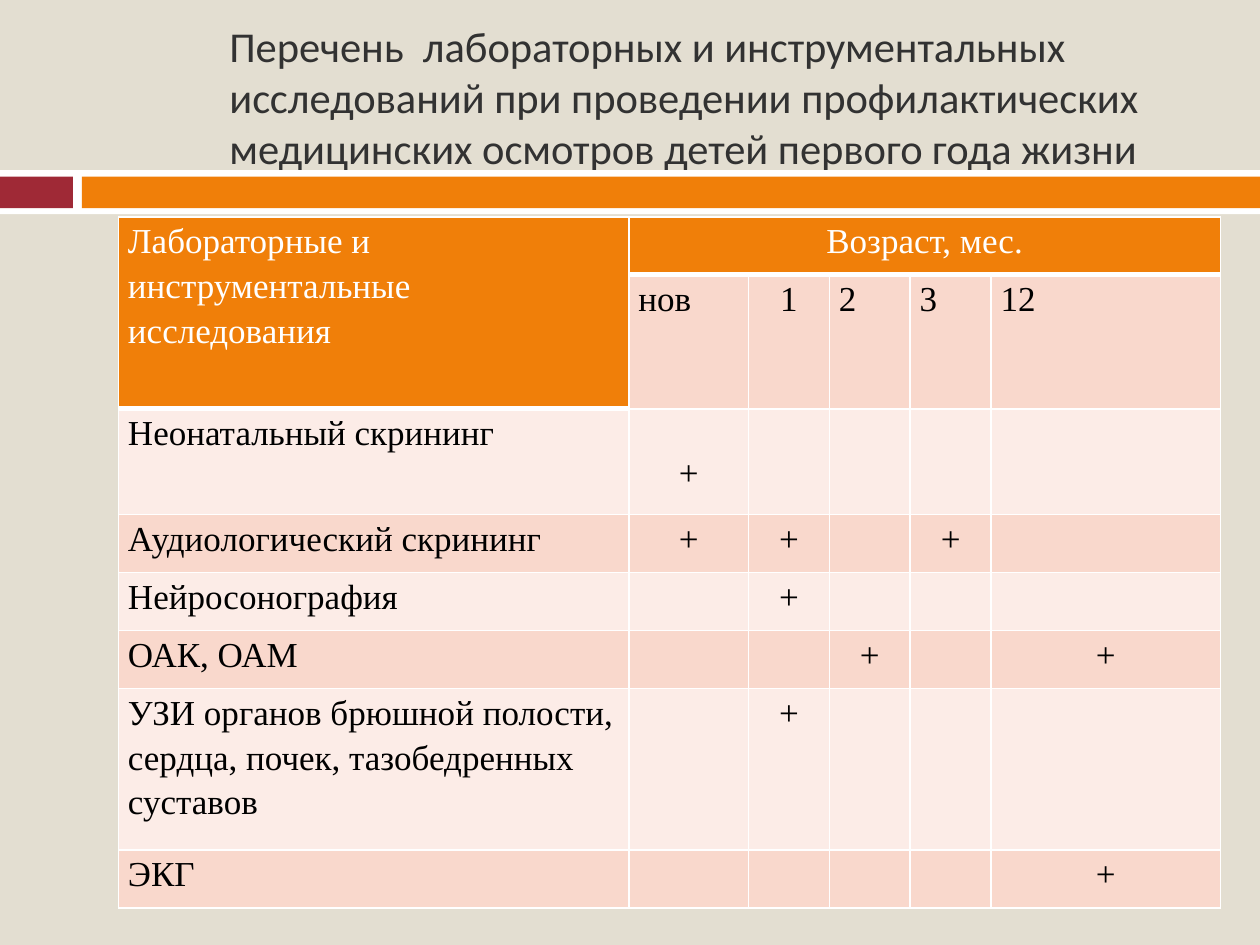
from lxml.etree import SubElement
from pptx import Presentation
from pptx.dml.color import RGBColor
from pptx.enum.shapes import MSO_SHAPE
from pptx.enum.text import MSO_ANCHOR, PP_ALIGN
from pptx.oxml.ns import qn
from pptx.util import Cm, Pt

WHITE, ORANGE, RED = "FFFFFF", "F07F09", "9F2936"
BACKGROUND, TITLE_COLOR, BLACK = "E3DED1", "323232", "000000"
BANDS = ["F9D8CC", "FCECE7"]

COLUMN_WIDTHS = [10.29, 2.41, 1.63, 1.63, 1.63, 4.62]
ROW_HEIGHTS = [1.17, 2.69, 2.13, 1.17, 1.17, 1.17, 3.25, 1.17]
ROWS = [
    ["Лабораторные и инструментальные исследования", "Возраст, мес.", "", "", "", ""],
    ["", "нов", "1", "2", "3", "12"],
    ["Неонатальный скрининг", "+", "", "", "", ""],
    ["Аудиологический скрининг", "+", "+", "", "+", ""],
    ["Нейросонография", "", "+", "", "", ""],
    ["ОАК, ОАМ", "", "", "+", "", "+"],
    ["УЗИ органов брюшной полости, сердца, почек, тазобедренных суставов", "", "+", "", "", ""],
    ["ЭКГ", "", "", "", "", "+"],
]
CENTERED = {"Возраст, мес.", "1", "+"}


def color(value):
    return RGBColor.from_string(value)


class SlideBuilder:
    title_font, title_size = "Calibri", 24.3
    table_font, table_size = "Times New Roman", 20

    def __init__(self, slide):
        self.slide = slide

    def background(self, fill):
        self.slide.background.fill.solid()
        self.slide.background.fill.fore_color.rgb = color(fill)

    def bar(self, left, top, width, height, fill):
        shape = self.slide.shapes.add_shape(
            MSO_SHAPE.RECTANGLE, Cm(left), Cm(top), Cm(width), Cm(height))
        shape.shadow.inherit = False
        shape.fill.solid()
        shape.fill.fore_color.rgb = color(fill)
        shape.line.fill.background()

    def run(self, paragraph, text, font, size, fill):
        run = paragraph.add_run()
        run.text = text
        run.font.name = font
        run.font.size = Pt(size)
        run.font.color.rgb = color(fill)

    def title(self, text, left, top, width, height):
        shape = self.slide.shapes.title
        shape.left, shape.top = Cm(left), Cm(top)
        shape.width, shape.height = Cm(width), Cm(height)
        frame = shape.text_frame
        frame.word_wrap = True
        frame.vertical_anchor = MSO_ANCHOR.BOTTOM
        frame.margin_top = frame.margin_bottom = 0
        paragraph = frame.paragraphs[0]
        paragraph.alignment = PP_ALIGN.LEFT
        self.run(paragraph, text, self.title_font, self.title_size, TITLE_COLOR)

    def borders(self, cell, top, bottom):
        properties = cell._tc.get_or_add_tcPr()
        for side, width in (("L", 1), ("R", 1), ("T", top), ("B", bottom)):
            line = SubElement(properties, qn(f"a:ln{side}"), w=str(Pt(width)))
            fill = SubElement(line, qn("a:solidFill"))
            SubElement(fill, qn("a:srgbClr"), val=WHITE)

    def cell(self, cell, text, fill, text_color):
        cell.margin_left = cell.margin_right = Cm(0.19)
        cell.margin_top = cell.margin_bottom = 0
        cell.fill.solid()
        cell.fill.fore_color.rgb = color(fill)
        if text:
            paragraph = cell.text_frame.paragraphs[0]
            paragraph.line_spacing = 1.15
            paragraph.alignment = PP_ALIGN.CENTER if text in CENTERED else PP_ALIGN.LEFT
            self.run(paragraph, text, self.table_font, self.table_size, text_color)

    def table(self, left, top):
        table = self.slide.shapes.add_table(
            len(ROWS), len(COLUMN_WIDTHS), Cm(left), Cm(top),
            Cm(sum(COLUMN_WIDTHS)), Cm(sum(ROW_HEIGHTS))).table
        for column, width in zip(table.columns, COLUMN_WIDTHS):
            column.width = Cm(width)
        for row, height in zip(table.rows, ROW_HEIGHTS):
            row.height = Cm(height)
        table.cell(0, 0).merge(table.cell(1, 0))
        table.cell(0, 1).merge(table.cell(0, 5))
        for row, texts in enumerate(ROWS):
            for column, text in enumerate(texts):
                cell = table.cell(row, column)
                last_header_row = 1 if column == 0 else 0
                header = row <= last_header_row
                self.borders(cell, 3 if row == last_header_row + 1 else 1, 3 if header else 1)
                self.cell(cell, text, ORANGE if header else BANDS[(row + 1) % 2],
                          WHITE if header else BLACK)
        table.cell(2, 1).margin_top = Cm(0.8)


def main():
    presentation = Presentation()
    presentation.slide_width, presentation.slide_height = Cm(25.4), Cm(19.05)
    builder = SlideBuilder(presentation.slides.add_slide(presentation.slide_layouts[5]))
    builder.background(BACKGROUND)
    builder.bar(0, 3.43, 25.4, 0.89, WHITE)
    builder.bar(0, 3.56, 1.47, 0.64, RED)
    builder.bar(1.65, 3.56, 23.75, 0.64, ORANGE)
    builder.title(
        "Перечень  лабораторных и инструментальных исследований при проведении "
        "профилактических медицинских осмотров детей первого года жизни",
        4.37, 0, 19.89, 3.48)
    builder.table(2.39, 4.37)
    presentation.save("out.pptx")


if __name__ == "__main__":
    main()
